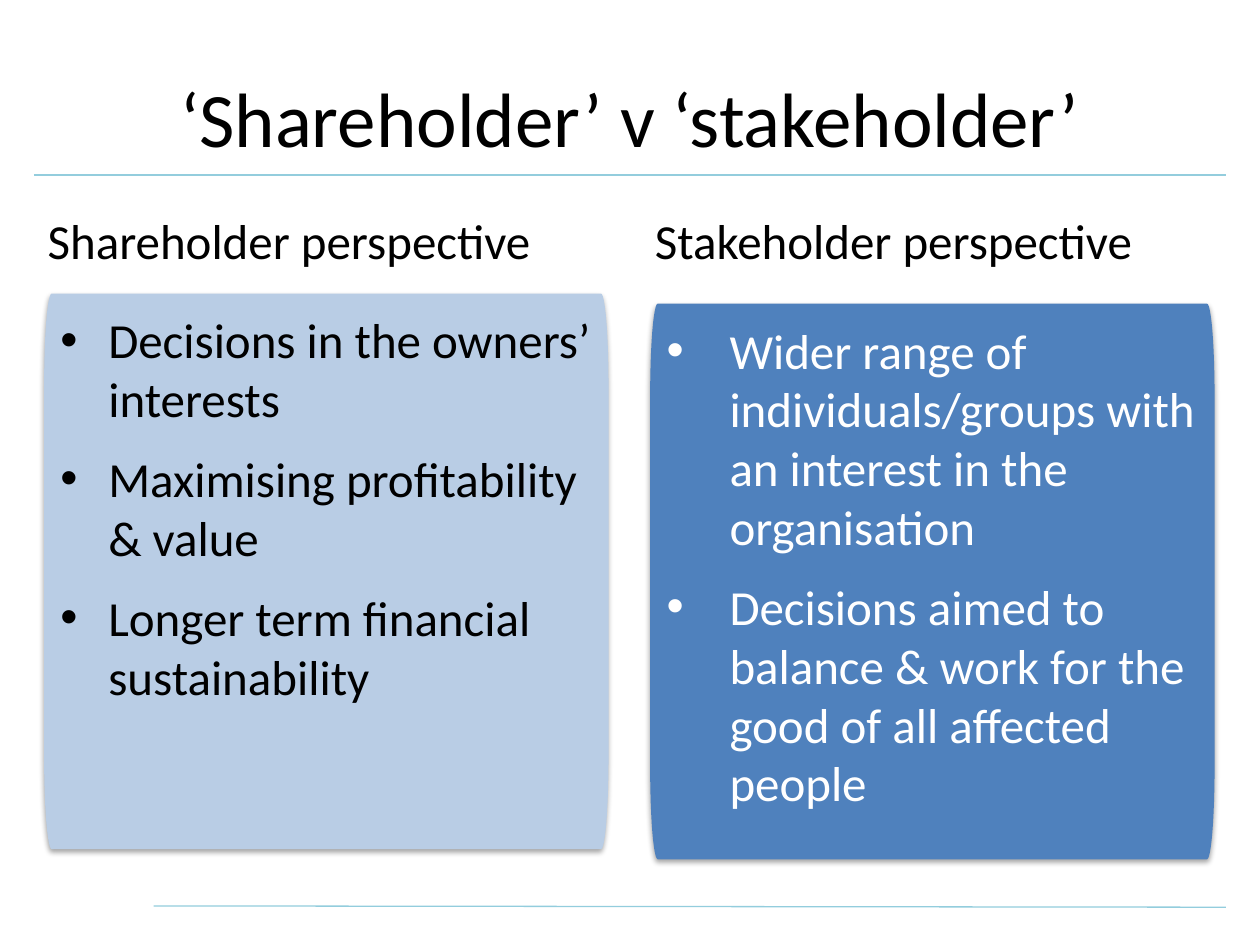
from math import cos, pi, sin
from lxml import etree
from pptx import Presentation
from pptx.dml.color import RGBColor
from pptx.enum.shapes import MSO_CONNECTOR
from pptx.enum.text import MSO_ANCHOR, MSO_AUTO_SIZE, PP_ALIGN
from pptx.oxml.ns import qn
from pptx.util import Inches, Pt

TOP, MIDDLE = MSO_ANCHOR.TOP, MSO_ANCHOR.MIDDLE
LEFT, CENTER = PP_ALIGN.LEFT, PP_ALIGN.CENTER
STRAIGHT = MSO_CONNECTOR.STRAIGHT
FIT_SHAPE = MSO_AUTO_SIZE.SHAPE_TO_FIT_TEXT
NO_FIT = MSO_AUTO_SIZE.NONE

TITLE = "‘Shareholder’ v ‘stakeholder’"
PERSPECTIVES = [
    {
        "heading": "Shareholder perspective",
        "heading_box": (0.28, 4.08),
        "points": [
            "Decisions in the owners’ interests",
            "Maximising profitability & value",
            "Longer term financial sustainability",
        ],
        "panel": (0.35, 2.33),
        "indent": 0.38,
        "fill": "panel_light",
        "color": "text",
    },
    {
        "heading": "Stakeholder perspective",
        "heading_box": (5.1, 4.03),
        "points": [
            "Wider range of individuals/groups with an interest in the organisation",
            "Decisions aimed to balance & work for the good of all affected people",
        ],
        "panel": (5.16, 2.41),
        "indent": 0.5,
        "fill": "panel_dark",
        "color": "text_inverse",
    },
]
RULES = [((1.22, 7.19), (9.73, 7.2)), ((0.27, 1.39), (9.73, 1.39))]
HEADING_TOP, HEADING_H = 1.62, 0.57
PANEL_W, PANEL_H = 4.48, 4.41
CORNER_W, CORNER_H, CORNER_STEPS = 0.06, 0.74, 12
PANEL_INSET = 0.13

THEME = {
    "font": "Calibri",
    "title_size": 44,
    "body_size": 28,
    "text": "000000",
    "text_inverse": "FFFFFF",
    "panel_light": "B9CDE5",
    "panel_dark": "4F81BD",
    "rule": "93CDDD",
}


def rgb(name):
    return RGBColor.from_string(THEME[name])


def style_text(p, size, color, align=LEFT):
    p.alignment = align
    for r in p.runs:
        r.font.name = THEME["font"]
        r.font.size = Pt(THEME[size])
        r.font.color.rgb = rgb(color)


def add_effects(shape, shadow=False):
    effects = etree.SubElement(shape._element.spPr, qn("a:effectLst"))
    if shadow:
        outer = etree.SubElement(
            effects, qn("a:outerShdw"), blurRad=str(Pt(3.1)), dist=str(Pt(1.8)),
            dir="5400000", rotWithShape="0",
        )
        color = etree.SubElement(outer, qn("a:srgbClr"), val=THEME["text"])
        etree.SubElement(color, qn("a:alpha"), val="35000")


def add_bullet(p, indent):
    pPr = p._p.get_or_add_pPr()
    pPr.set("marL", str(Inches(indent)))
    pPr.set("indent", str(-Inches(indent)))
    etree.SubElement(pPr, qn("a:buFont"), typeface="Arial")
    etree.SubElement(pPr, qn("a:buChar"), char="•")


def panel_outline(x, y):
    right, bottom = x + PANEL_W - CORNER_W, y + PANEL_H - CORNER_H
    centers = [
        (x + CORNER_W, y + CORNER_H), (right, y + CORNER_H),
        (right, bottom), (x + CORNER_W, bottom),
    ]
    points = []
    for corner, (cx, cy) in enumerate(centers):
        for step in range(CORNER_STEPS + 1):
            angle = pi + (corner + step / CORNER_STEPS) * pi / 2
            points.append((Inches(cx + CORNER_W * cos(angle)),
                           Inches(cy + CORNER_H * sin(angle))))
    return points


def add_rule(s, start, end):
    line = s.shapes.add_connector(STRAIGHT, *map(Inches, start + end))
    line.line.color.rgb = rgb("rule")
    line.line.width = Pt(0.75)
    add_effects(line)


def add_panel(s, item):
    points = panel_outline(*item["panel"])
    builder = s.shapes.build_freeform(*points[0])
    builder.add_line_segments(points[1:], close=True)
    sp = builder.convert_to_shape()
    sp.fill.solid()
    sp.fill.fore_color.rgb = rgb(item["fill"])
    sp.line.fill.background()
    add_effects(sp, shadow=True)
    tf = sp.text_frame
    tf.word_wrap = True
    tf.vertical_anchor = TOP
    tf.margin_left = tf.margin_right = Inches(PANEL_INSET)
    tf.margin_top = tf.margin_bottom = Inches(PANEL_INSET)
    tf.text = "\n".join(item["points"])
    for p in tf.paragraphs:
        add_bullet(p, item["indent"])
        p.space_after = Pt(12)
        style_text(p, "body_size", item["color"])


def add_heading(s, item):
    x, w = item["heading_box"]
    box = s.shapes.add_textbox(*map(Inches, (x, HEADING_TOP, w, HEADING_H)))
    tf = box.text_frame
    tf.word_wrap = False
    tf.auto_size = FIT_SHAPE
    tf.text = item["heading"]
    style_text(tf.paragraphs[0], "body_size", "text")


def add_title(s):
    sp = s.shapes.title
    sp.left, sp.top, sp.width, sp.height = map(Inches, (0.5, 0.3, 9, 1.25))
    tf = sp.text_frame
    tf.text = TITLE
    tf.auto_size = NO_FIT
    tf.vertical_anchor = MIDDLE
    style_text(tf.paragraphs[0], "title_size", "text", CENTER)


def main():
    prs = Presentation()
    prs.slide_width, prs.slide_height = Inches(10), Inches(7.5)
    s = prs.slides.add_slide(prs.slide_layouts[5])
    for start, end in RULES:
        add_rule(s, start, end)
    add_title(s)
    for item in PERSPECTIVES:
        add_panel(s, item)
    for item in PERSPECTIVES:
        add_heading(s, item)
    prs.save("out.pptx")


if __name__ == "__main__":
    main()
